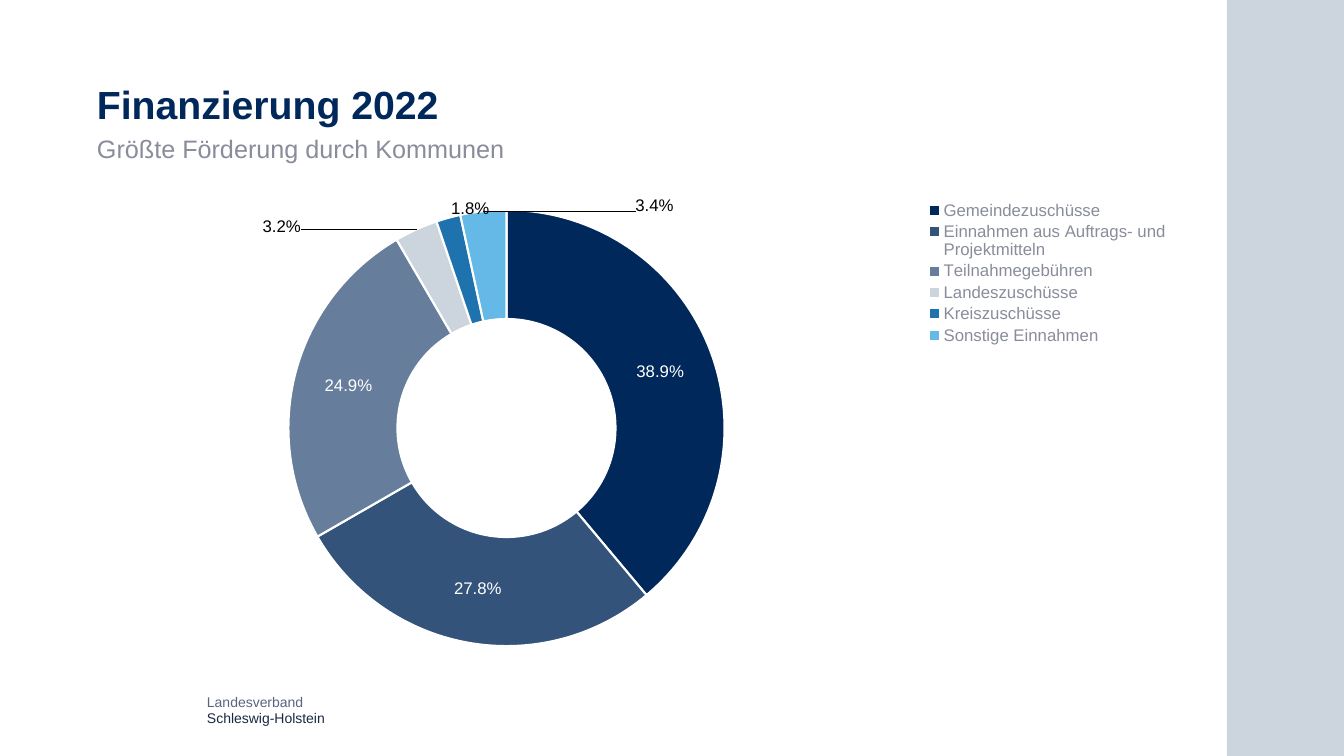
from lxml.etree import SubElement
from pptx import Presentation
from pptx.chart.data import CategoryChartData
from pptx.dml.color import RGBColor
from pptx.enum.chart import XL_CHART_TYPE, XL_LEGEND_POSITION
from pptx.enum.shapes import MSO_SHAPE
from pptx.enum.text import MSO_ANCHOR
from pptx.oxml import parse_xml
from pptx.oxml.ns import nsdecls, qn
from pptx.util import Pt

PX = 914400 / 100.8
FONT = "Arial"
HUES = {
    "navy": "00285A", "blue": "1E73AF", "sky": "64B9E6", "gray": "898D9B",
    "slate": "586481", "ink": "1A2943", "white": "FFFFFF", "black": "000000",
}
# Category, share, colour, opacity in percent, label shift (None keeps it inside)
SHARES = [
    ("Gemeindezuschüsse", 0.389, "navy", 100, None),
    ("Einnahmen aus Auftrags- und Projektmitteln", 0.278, "navy", 80, None),
    ("Teilnahmegebühren", 0.249, "navy", 60, None),
    ("Landeszuschüsse", 0.032, "navy", 20, (-157, -52)),
    ("Kreiszuschüsse", 0.018, "blue", 100, (8, -62)),
    ("Sonstige Einnahmen", 0.034, "sky", 100, (166, -61)),
]


def emu(*sizes):
    return [round(size * PX) for size in sizes]


def style(font, size, hue, bold=False):
    font.name, font.size, font.bold = FONT, Pt(size), bold
    font.color.rgb = RGBColor.from_string(HUES[hue])


def write(para, text, size=10, hue="navy", bold=False, lead=0.9):
    run = para.add_run()
    run.text = text
    para.line_spacing = lead
    style(run.font, size, hue, bold)


def paint(fill, hue, alpha=100):
    fill.solid()
    fill.fore_color.rgb = RGBColor.from_string(HUES[hue])
    if alpha < 100:
        color = fill._xPr.find(".//" + qn("a:srgbClr"))
        SubElement(color, qn("a:alpha")).set("val", str(alpha * 1000))


def place(node, at, **parts):
    """Give a chart part a manual layout as child number at."""
    for old in node.findall(qn("c:layout")):
        node.remove(old)
    body = "".join(f'<c:{key} val="{val}"/>' for key, val in parts.items())
    node.insert(at, parse_xml(
        f'<c:layout {nsdecls("c")}><c:manualLayout>{body}</c:manualLayout></c:layout>'))


class Deck:
    def __init__(self, wide, high):
        self.file = Presentation()
        self.file.slide_width, self.file.slide_height = emu(wide, high)
        self.slide = self.file.slides.add_slide(self.file.slide_layouts[6])

    def text(self, box, lines, anchor=MSO_ANCHOR.TOP):
        frame = self.slide.shapes.add_textbox(*emu(*box)).text_frame
        frame.word_wrap, frame.vertical_anchor = True, anchor
        frame.margin_left = frame.margin_right = 0
        frame.margin_top = frame.margin_bottom = 0
        for i, (line, form) in enumerate(lines):
            para = frame.add_paragraph() if i else frame.paragraphs[0]
            write(para, line, **form)

    def rect(self, box, hue, alpha):
        shape = self.slide.shapes.add_shape(MSO_SHAPE.RECTANGLE, *emu(*box))
        shape.shadow.inherit = False
        shape.line.fill.background()
        paint(shape.fill, hue, alpha)

    def ring(self, box, plot, key, rows):
        data = CategoryChartData(number_format="0.0%")
        data.categories = [row[0] for row in rows]
        data.add_series("Series 1", [row[1] for row in rows])
        chart = self.slide.shapes.add_chart(
            XL_CHART_TYPE.DOUGHNUT, *emu(*box), data).chart
        chart.has_title = False
        style(chart.font, 10, "navy")
        root = chart._chartSpace
        root.find(".//" + qn("c:holeSize")).set("val", "60")

        # Plot and legend, placed as shares of the chart frame
        left, top, wide, high = box

        def frame(area):
            x, y, w, h = area
            return dict(xMode="edge", yMode="edge",
                        x=round((x - left) / wide, 3), y=round((y - top) / high, 3),
                        w=round(w / wide, 3), h=round(h / high, 3))

        chart.has_legend = True
        legend = chart.legend
        legend.position = XL_LEGEND_POSITION.CORNER
        legend.include_in_layout = False
        style(legend.font, 12, "gray")
        place(legend._element, 1, **frame(key))
        place(root.find(".//" + qn("c:plotArea")), 0,
              layoutTarget="inner", **frame(plot))

        # Segments and labels
        series = chart.plots[0].series[0]
        labels = series.data_labels
        labels.show_value, labels.show_percentage = True, False
        labels.number_format, labels.number_format_is_linked = "0.0%", False
        style(labels.font, 12, "white")
        moves = []
        for i, (_, _, hue, alpha, move) in enumerate(rows):
            point = series.points[i]
            paint(point.format.fill, hue, alpha)
            point.format.line.width = Pt(1.5)
            paint(point.format.line.fill, "white")
            if move:
                style(point.data_label.font, 12, "black")
                moves.append(move)
        for label, (dx, dy) in zip(root.iter(qn("c:dLbl")), moves):
            place(label, 1, x=round(dx / wide, 3), y=round(dy / high, 3))
            label.insert(2, parse_xml(
                f'<c:numFmt {nsdecls("c")} formatCode="0.0%" sourceLinked="0"/>'))


def main():
    deck = Deck(1344, 756)

    # Footer and side band
    deck.text((207, 692, 251, 34), [
        ("Landesverband", dict(hue="slate", lead=Pt(11))),
        ("Schleswig-Holstein", dict(hue="ink", lead=Pt(11))),
    ], MSO_ANCHOR.BOTTOM)
    deck.rect((1227, 0, 117, 756), "navy", 20)

    # Heading
    deck.text((97, 43, 1038, 85),
              [("Finanzierung 2022", dict(size=28, bold=True))], MSO_ANCHOR.BOTTOM)
    deck.text((97, 137, 1038, 30),
              [("Größte Förderung durch Kommunen", dict(size=18, hue="gray"))])

    # Funding shares
    deck.ring((97, 197, 1075, 465), (288, 210, 436, 436), (924, 198, 248, 150), SHARES)

    deck.file.save("out.pptx")


if __name__ == "__main__":
    main()
